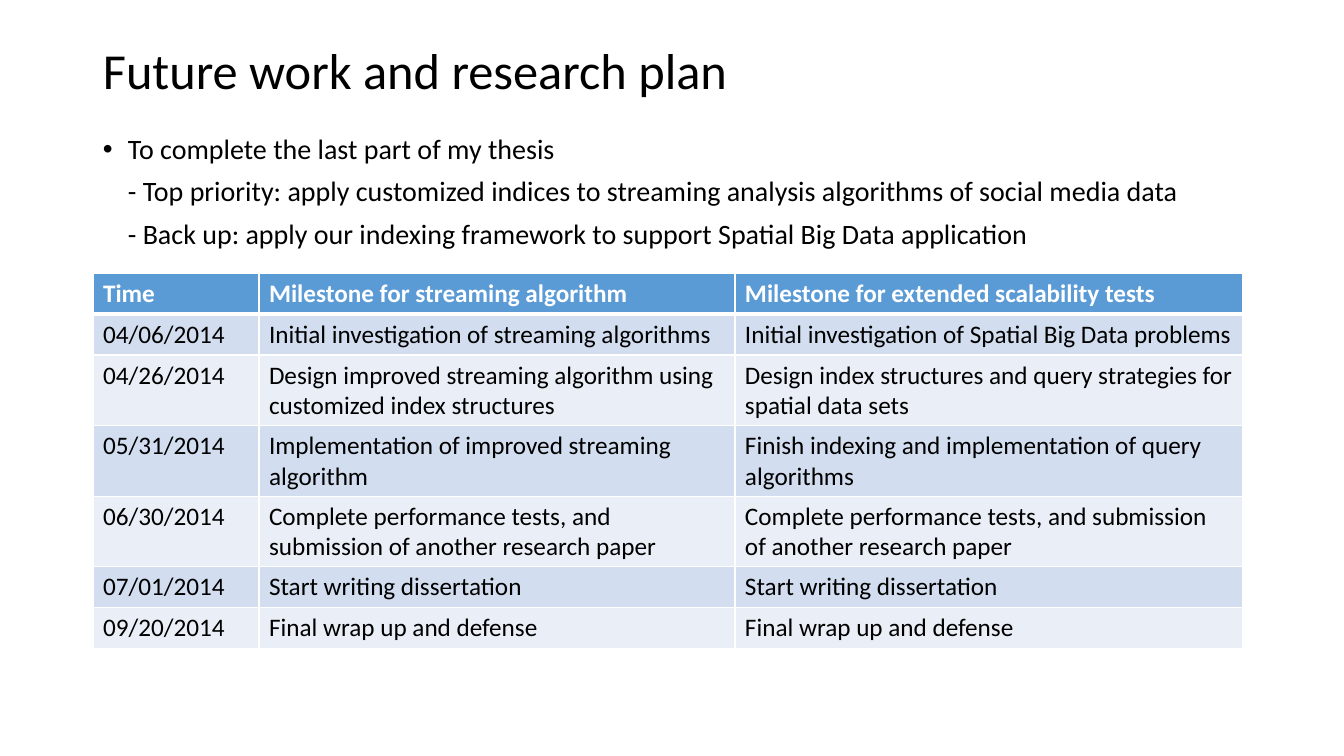
"""Build the future work and research plan slide."""
from lxml.etree import SubElement
from pptx import Presentation
from pptx.dml.color import RGBColor
from pptx.enum.text import MSO_ANCHOR
from pptx.oxml.ns import qn
from pptx.util import Emu, Pt

BLACK = RGBColor(0x00, 0x00, 0x00)
WHITE = RGBColor(0xFF, 0xFF, 0xFF)
HEADER_BLUE = RGBColor(0x5B, 0x9B, 0xD5)
BAND_DARK = RGBColor(0xD2, 0xDE, 0xEF)
BAND_LIGHT = RGBColor(0xEA, 0xEF, 0xF7)
FONT = "Calibri"
ROW_HEIGHT = 41
COLUMN_WIDTHS = [166, 476, 508]

PLAN = [
    "To complete the last part of my thesis",
    "- Top priority: apply customized indices to streaming analysis algorithms of social media data",
    "- Back up: apply our indexing framework to support Spatial Big Data application",
]
MILESTONES = [
    ("Time", "Milestone for streaming algorithm", "Milestone for extended scalability tests"),
    ("04/06/2014", "Initial investigation of streaming algorithms",
     "Initial investigation of Spatial Big Data problems"),
    ("04/26/2014", "Design improved streaming algorithm using customized index structures",
     "Design index structures and query strategies for spatial data sets"),
    ("05/31/2014", "Implementation of improved streaming algorithm",
     "Finish indexing and implementation of query algorithms"),
    ("06/30/2014", "Complete performance tests, and submission of another research paper",
     "Complete performance tests, and submission of another research paper"),
    ("07/01/2014", "Start writing dissertation", "Start writing dissertation"),
    ("09/20/2014", "Final wrap up and defense", "Final wrap up and defense"),
]


def px(length):
    return Emu(round(length * 914400 / 100.8))


def style_font(paragraph, size, color=BLACK, bold=False):
    font = paragraph.font if not paragraph.runs else paragraph.runs[0].font
    font.name = FONT
    font.size = Pt(size)
    font.bold = bold
    font.color.rgb = color


presentation = Presentation()
presentation.slide_width = px(1344)
presentation.slide_height = px(756)
slide = presentation.slides.add_slide(presentation.slide_layouts[6])

title_frame = slide.shapes.add_textbox(px(93), px(0), px(1191), px(146)).text_frame
title_frame.word_wrap = True
title_frame.vertical_anchor = MSO_ANCHOR.MIDDLE
title_frame.text = "Future work and research plan"
title_frame.paragraphs[0].line_spacing = 0.9
style_font(title_frame.paragraphs[0], 36)

plan_frame = slide.shapes.add_textbox(px(93), px(127), px(1190), px(134)).text_frame
plan_frame.word_wrap = True
plan_frame.text = "\n".join(PLAN)
for index, paragraph in enumerate(plan_frame.paragraphs):
    properties = paragraph._p.get_or_add_pPr()
    properties.set("marL", str(px(25)))
    properties.set("indent", str(px(0 if index else -25)))
    if index == 0:
        SubElement(properties, qn("a:buFont"), typeface="Arial")
        SubElement(properties, qn("a:buChar"), char="•")
    paragraph.space_after = Pt(6)
    style_font(paragraph, 20)

table = slide.shapes.add_table(
    len(MILESTONES), len(COLUMN_WIDTHS), px(93), px(273),
    px(sum(COLUMN_WIDTHS)), px(ROW_HEIGHT * len(MILESTONES))).table
for column, width in zip(table.columns, COLUMN_WIDTHS):
    column.width = px(width)

for row_index, texts in enumerate(MILESTONES):
    is_header = row_index == 0
    band = BAND_DARK if row_index % 2 else BAND_LIGHT
    for column_index, text in enumerate(texts):
        cell = table.cell(row_index, column_index)
        cell.text = text
        style_font(cell.text_frame.paragraphs[0], 18, WHITE if is_header else BLACK, is_header)
        cell_properties = cell._tc.get_or_add_tcPr()
        for side in ("L", "R", "T", "B"):
            under_header = (row_index, side) in ((0, "B"), (1, "T"))
            border = SubElement(cell_properties, qn(f"a:ln{side}"), w=str(Pt(3 if under_header else 1)))
            border_fill = SubElement(border, qn("a:solidFill"))
            SubElement(border_fill, qn("a:srgbClr"), val=str(WHITE))
        cell.fill.solid()
        cell.fill.fore_color.rgb = HEADER_BLUE if is_header else band

presentation.save("out.pptx")
